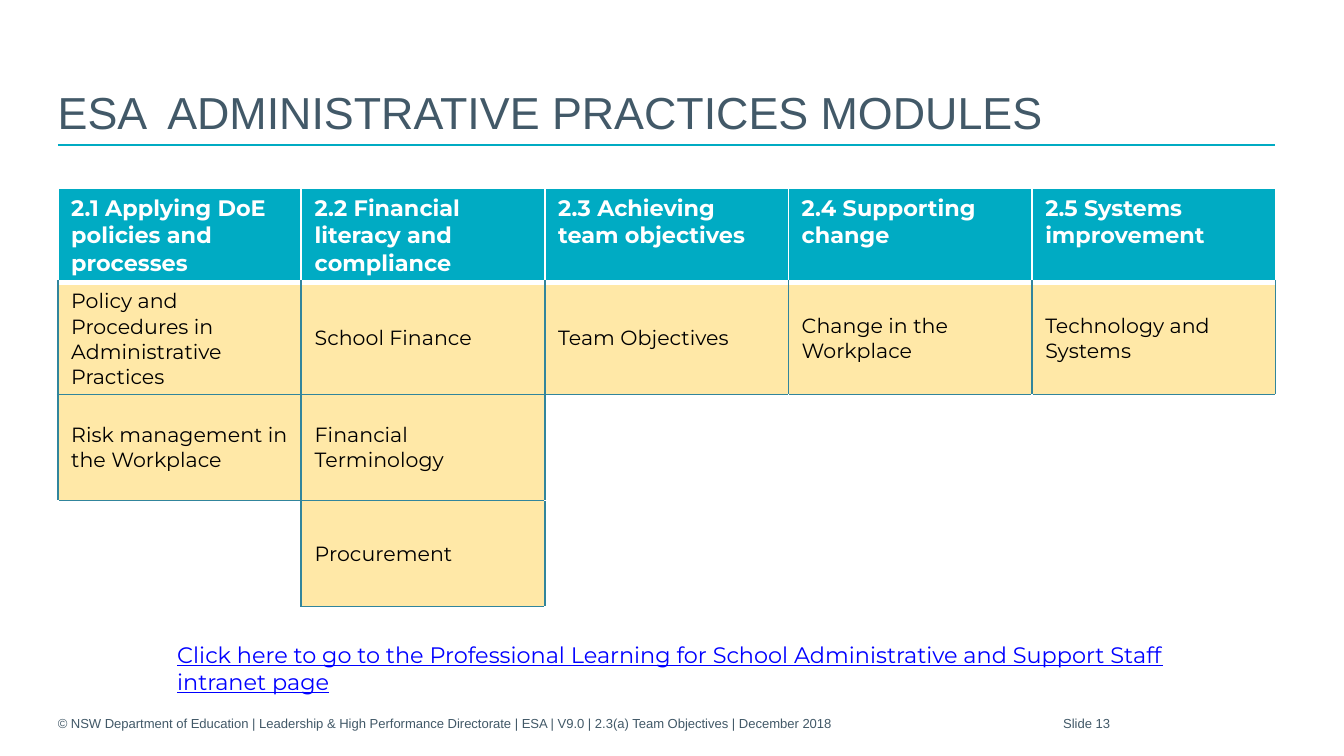
import pptx
import pptx.util
import pptx.dml.color
import pptx.enum.shapes
import pptx.enum.text
import pptx.oxml.ns
from lxml import etree

Inches = pptx.util.Inches
Pt = pptx.util.Pt
RGBColor = pptx.dml.color.RGBColor
ANCHOR = pptx.enum.text.MSO_ANCHOR
ALIGN = pptx.enum.text.PP_ALIGN
qn = pptx.oxml.ns.qn

TEAL = RGBColor(0x00, 0xAB, 0xC3)
SLATE = RGBColor(0x42, 0x59, 0x68)
SAND = RGBColor(0xFF, 0xE8, 0xA7)
EDGE = RGBColor(0x31, 0x85, 0x9C)
LINK = RGBColor(0x00, 0x00, 0xFF)
WHITE = RGBColor(0xFF, 0xFF, 0xFF)
BLACK = RGBColor(0x00, 0x00, 0x00)

LEFT, WIDTH = 0.43, 9.06
ROW_HEIGHTS = [0.41, 0.79, 0.79, 0.79]
MODULES = [
    ["2.1 Applying DoE policies and processes", "2.2 Financial literacy and compliance",
     "2.3 Achieving team objectives", "2.4 Supporting change", "2.5 Systems improvement"],
    ["Policy and Procedures in Administrative Practices", "School Finance",
     "Team Objectives", "Change in the Workplace", "Technology and Systems"],
    ["Risk management in the Workplace", "Financial Terminology", "", "", ""],
    ["", "Procurement", "", "", ""],
]


def write_text(frame, text, *, size, color, font="Arial", bold=False,
               underline=False, align=None):
    para = frame.paragraphs[0]
    para.alignment = align
    span = para.add_run()
    span.text = text
    span.font.name = font
    span.font.size = Pt(size)
    span.font.color.rgb = color
    span.font.bold = bold
    span.font.underline = underline


def add_text(page, text, left, top, width, height, *, anchor=ANCHOR.BOTTOM,
             inset=0.1, **text_format):
    box = page.shapes.add_textbox(Inches(left), Inches(top), Inches(width), Inches(height))
    frame = box.text_frame
    frame.word_wrap = True
    frame.vertical_anchor = anchor
    frame.margin_left = Inches(inset)
    write_text(frame, text, **text_format)


def add_rule(page, left, top, width):
    rule = page.shapes.add_connector(
        pptx.enum.shapes.MSO_CONNECTOR.STRAIGHT,
        Inches(left), Inches(top), Inches(left + width), Inches(top))
    rule.line.color.rgb = TEAL
    rule.line.width = Pt(1)
    etree.SubElement(rule.element.spPr, qn("a:effectLst"))


def edge_style(row, column, next_row, next_column):
    """Header edges are white; edges touching a filled body cell are blue."""
    if 0 in (row, next_row):
        return WHITE, 3 if {row, next_row} == {0, 1} else 1
    for r, c in ((row, column), (next_row, next_column)):
        if 0 <= r < len(MODULES) and 0 <= c < len(MODULES[0]) and MODULES[r][c]:
            return EDGE, 1
    return WHITE, 1


def set_borders(cell, row, column):
    properties = cell._tc.get_or_add_tcPr()
    neighbours = {"lnL": (row, column - 1), "lnR": (row, column + 1),
                  "lnT": (row - 1, column), "lnB": (row + 1, column)}
    for index, (side, neighbour) in enumerate(neighbours.items()):
        color, width = edge_style(row, column, *neighbour)
        line = etree.Element(qn("a:" + side), w=str(Pt(width)))
        fill = etree.SubElement(line, qn("a:solidFill"))
        etree.SubElement(fill, qn("a:srgbClr"), val=str(color))
        properties.insert(index, line)


def add_module_table(page, left, top, width, height):
    columns = len(MODULES[0])
    frame = page.shapes.add_table(
        len(MODULES), columns, Inches(left), Inches(top), Inches(width), Inches(height))
    table = frame.table
    table.horz_banding = False
    for column in table.columns:
        column.width = Inches(width / columns)
    for r, labels in enumerate(MODULES):
        table.rows[r].height = Inches(ROW_HEIGHTS[r])
        header = r == 0
        for c, label in enumerate(labels):
            cell = table.cell(r, c)
            if label:
                cell.fill.solid()
                cell.fill.fore_color.rgb = TEAL if header else SAND
                cell.vertical_anchor = ANCHOR.TOP if header else ANCHOR.MIDDLE
                write_text(cell.text_frame, label, font="Montserrat", bold=header,
                           size=12 if header else 11, color=WHITE if header else BLACK)
            else:
                cell.fill.background()
            set_borders(cell, r, c)
    # Row heights reset the frame, which also holds the wrapped text
    frame.height = Inches(height)


def main():
    deck = pptx.Presentation()
    deck.slide_width, deck.slide_height = Inches(10), Inches(10 * 9 / 16)
    page = deck.slides.add_slide(deck.slide_layouts[6])

    # Title and rule
    add_rule(page, LEFT, 1.08, WIDTH)
    add_text(page, "ESA  ADMINISTRATIVE PRACTICES MODULES", LEFT, 0.3, WIDTH, 0.78,
             inset=0, size=24, color=SLATE)

    # Footer
    add_text(page, "© NSW Department of Education | Leadership & High Performance Directorate"
             " | ESA | V9.0 | 2.3(a) Team Objectives | December 2018",
             LEFT, 5.19, 7.48, 0.3, inset=0, size=7, color=SLATE)
    add_text(page, "Slide 13", 6.92, 5.19, 2.33, 0.3, size=7, color=SLATE,
             align=ALIGN.CENTER)

    # Modules and intranet prompt
    add_module_table(page, LEFT, 1.4, WIDTH, 3.06)
    add_text(page, "Click here to go to the Professional Learning for School Administrative"
             " and Support Staff intranet page", 1.22, 4.72, 7.8, 0.3, anchor=ANCHOR.TOP,
             font="Montserrat", size=12, color=LINK, underline=True)

    deck.save("out.pptx")


if __name__ == "__main__":
    main()
